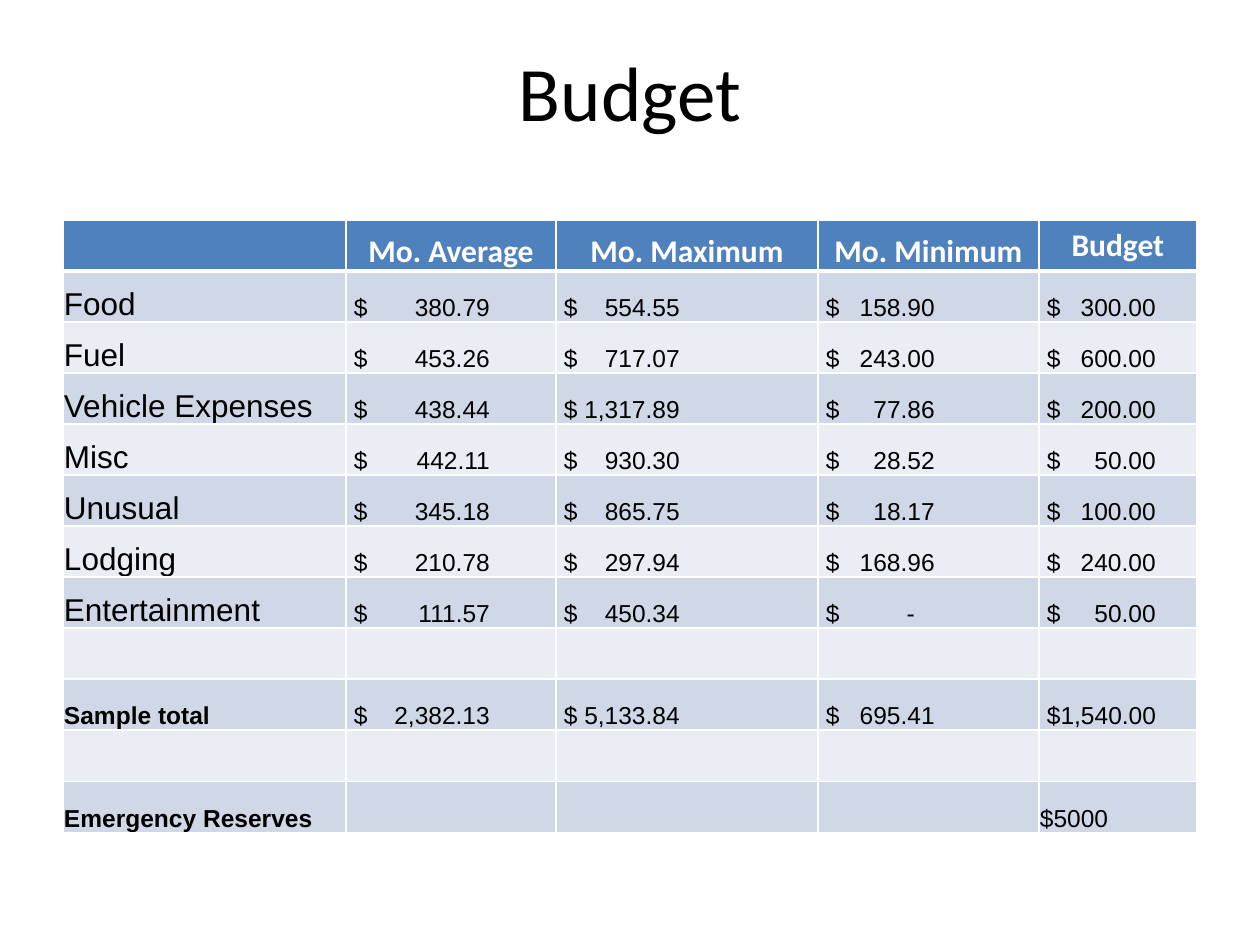
from dataclasses import dataclass

from lxml import etree
from pptx import Presentation
from pptx import util as u
from pptx.dml.color import RGBColor
from pptx.enum import text
from pptx.oxml.ns import qn


@dataclass(frozen=True)
class Theme:
    head: str = "4F81BD"
    bands: tuple = ("D0D8E8", "E9EDF4")
    ink: str = "000000"
    light: str = "FFFFFF"
    sans: str = "Calibri"
    plain: str = "Arial"
    title: int = 44
    large: int = 18
    small: int = 14
    rule: int = 3


THEME = Theme()
WIDTHS = (283, 210, 262, 221, 158)
ROW = 51
PAD = 8  # left inset of the money cells
STOPS = (0, 136, 116, 109, 109)  # right edge of the amounts, by column
DASH = 89  # right edge of a lone dash

HEADS = ("", "Mo. Average", "Mo. Maximum", "Mo. Minimum", "Budget")
ROWS = (
    ("Food", "380.79", "554.55", "158.90", "300.00"),
    ("Fuel", "453.26", "717.07", "243.00", "600.00"),
    ("Vehicle Expenses", "438.44", "1,317.89", "77.86", "200.00"),
    ("Misc", "442.11", "930.30", "28.52", "50.00"),
    ("Unusual", "345.18", "865.75", "18.17", "100.00"),
    ("Lodging", "210.78", "297.94", "168.96", "240.00"),
    ("Entertainment", "111.57", "450.34", "-", "50.00"),
    (),
    ("Sample total", "2,382.13", "5,133.84", "695.41", "$1,540.00"),
    (),
    ("Emergency Reserves", "", "", "", "$5000"),
)
BOLD = ("Sample total", "Emergency Reserves")


def px(n):
    return u.Emu(round(n * 914400 / 126))


def put(obj, **vals):
    for key, val in vals.items():
        setattr(obj, key, val)


def style(par, size, name, color, bold=False):
    put(par.font, size=u.Pt(size), name=name, bold=bold)
    par.font.color.rgb = RGBColor.from_string(color)


def paint(cell, color):
    cell.fill.solid()
    cell.fill.fore_color.rgb = RGBColor.from_string(color)


def seat(cell, left=1):
    """Rest the text on the floor of its cell."""
    put(cell, vertical_anchor=text.MSO_ANCHOR.BOTTOM, margin_left=px(left),
        margin_top=px(1), margin_right=px(1), margin_bottom=0)


def rule_off(cell):
    """Draw the heavy line below a header cell."""
    line = etree.Element(qn("a:lnB"), w=str(u.Pt(THEME.rule)))
    fill = etree.SubElement(line, qn("a:solidFill"))
    etree.SubElement(fill, qn("a:srgbClr"), val=THEME.light)
    cell._tc.get_or_add_tcPr().insert(0, line)


def add_tab(par, stop):
    tabs = etree.SubElement(par._p.get_or_add_pPr(), qn("a:tabLst"))
    etree.SubElement(tabs, qn("a:tab"), pos=str(px(stop)), algn="r")


def add_title(slide, box, words):
    title = slide.shapes.title
    put(title, **dict(zip(("left", "top", "width", "height"), map(px, box))))
    put(title.text_frame, text=words, vertical_anchor=text.MSO_ANCHOR.TOP)
    par = title.text_frame.paragraphs[0]
    par.alignment = text.PP_ALIGN.CENTER
    style(par, THEME.title, THEME.sans, THEME.ink)


def fill_head(cell, words):
    paint(cell, THEME.head)
    rule_off(cell)
    if not words:
        return
    if words != "Budget":
        seat(cell)
    cell.text = words
    par = cell.text_frame.paragraphs[0]
    par.alignment = text.PP_ALIGN.CENTER
    style(par, THEME.large, THEME.sans, THEME.light, True)


def fill_label(cell, words):
    seat(cell)
    cell.text = words
    bold = words in BOLD
    size = THEME.small if bold else THEME.large
    style(cell.text_frame.paragraphs[0], size, THEME.plain, THEME.ink, bold)


def fill_money(cell, value, stop):
    seat(cell, 1 if value == "$5000" else PAD)
    whole = value.startswith("$")
    cell.text = value if whole else "$\t" + value
    par = cell.text_frame.paragraphs[0]
    if not whole:
        add_tab(par, DASH if value == "-" else stop)
    style(par, THEME.small, THEME.plain, THEME.ink)


def add_budget(slide, box):
    count = len(ROWS) + 1
    table = slide.shapes.add_table(count, len(HEADS), *map(px, box)).table
    for col, width in zip(table.columns, WIDTHS):
        col.width = px(width)
    for row in table.rows:
        row.height = px(ROW)
    # Header row
    for c, words in enumerate(HEADS):
        fill_head(table.cell(0, c), words)
    # Banded body rows
    for r, row in enumerate(ROWS):
        for c in range(len(HEADS)):
            cell = table.cell(r + 1, c)
            paint(cell, THEME.bands[r % 2])
            value = row[c] if row else ""
            if value and c == 0:
                fill_label(cell, value)
            elif value:
                fill_money(cell, value, STOPS[c])


def main():
    deck = Presentation()
    put(deck, slide_width=px(1260), slide_height=px(945))
    slide = deck.slides.add_slide(deck.slide_layouts[5])
    add_title(slide, (63, 38, 1134, 157), "Budget")
    add_budget(slide, (63, 220, sum(WIDTHS), ROW * (len(ROWS) + 1)))
    deck.save("out.pptx")


if __name__ == "__main__":
    main()
